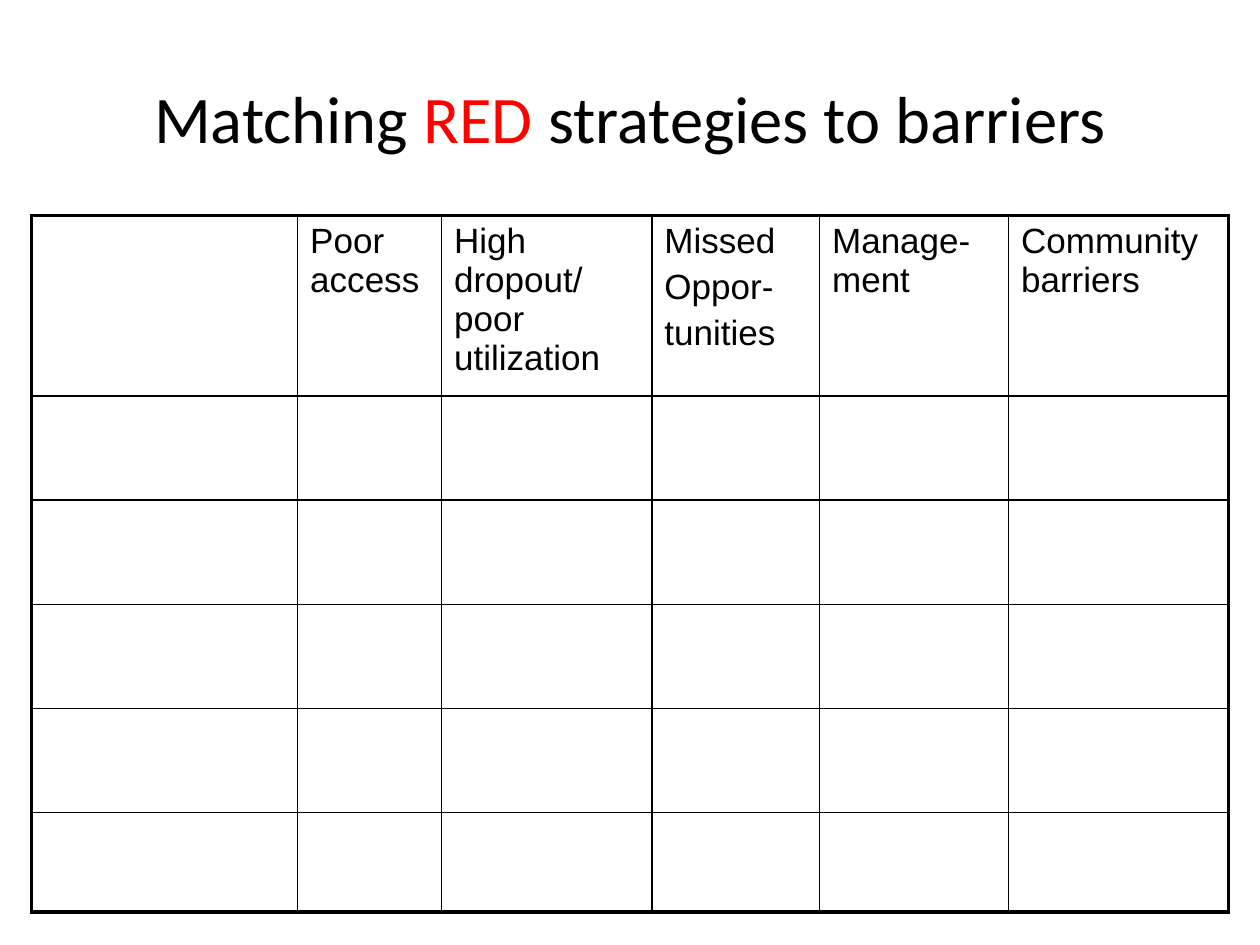
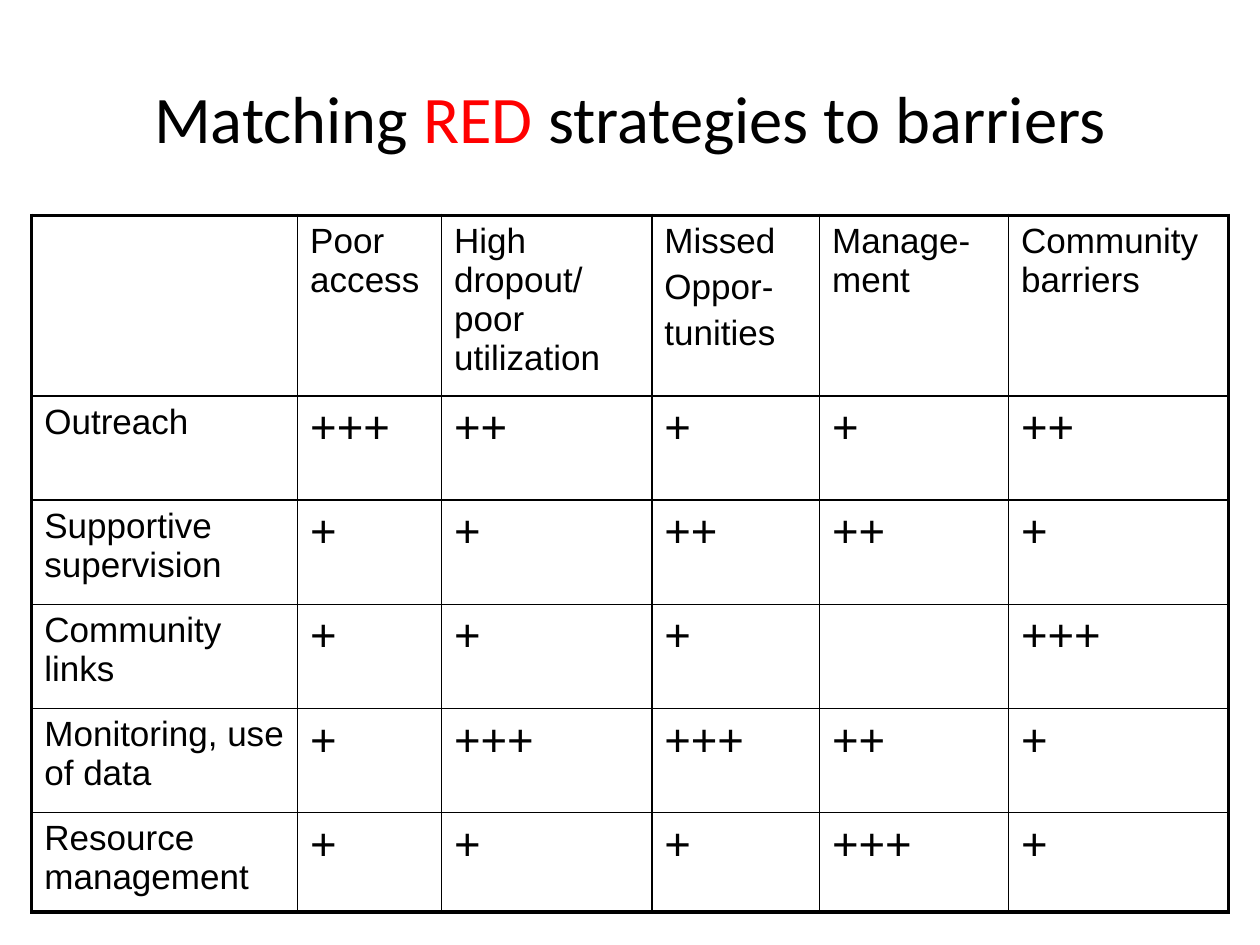
from lxml.etree import SubElement
from pptx import Presentation
from pptx.dml.color import RGBColor
from pptx.enum.text import MSO_ANCHOR, PP_ALIGN
from pptx.oxml.ns import qn
from pptx.util import Cm, Pt

BLACK, RED, WHITE = "000000", "FF0000", "FFFFFF"
THIN, THICK = 1, 2.25
TITLE = [("Matching ", BLACK), ("RED", RED), (" strategies to barriers", BLACK)]
HEADS = ["", "Poor access", "High dropout/ poor utilization",
         "Missed\nOppor-\ntunities", "Manage-ment", "Community barriers"]
SCORES = [
    ("Outreach", 3, 2, 1, 1, 2),
    ("Supportive supervision", 1, 1, 2, 2, 1),
    ("Community links", 1, 1, 1, 0, 3),
    ("Monitoring, use of data", 1, 3, 3, 2, 1),
    ("Resource management", 1, 1, 1, 3, 1),
]
BLANK = [("", 0, 0, 0, 0, 0)] * len(SCORES)
WIDTHS = [5.36, 2.9, 4.24, 3.38, 3.81, 4.44]
HEIGHTS = [3.43, 2.1, 2.1, 2.1, 2.1, 2]


def tint(code):
    return RGBColor.from_string(code)


def write(frame, text, size=20, font="Arial", align=PP_ALIGN.LEFT, gap=0.2):
    parts = text if isinstance(text, list) else [(text, BLACK)]
    para = frame.paragraphs[0]
    for words, color in parts:
        for num, line in enumerate(words.split("\n")):
            if num:
                para = frame.add_paragraph()
            para.alignment = align
            para.space_before = Pt(size * gap)
            run = para.add_run()
            run.text = line
            run.font.size, run.font.name = Pt(size), font
            run.font.color.rgb = tint(color)


def edge(cell, sides):
    props = cell._tc.get_or_add_tcPr()
    for side, width in sides.items():
        line = SubElement(props, qn(f"a:ln{side}"), w=str(Pt(width)))
        fill = SubElement(line, qn("a:solidFill"))
        SubElement(fill, qn("a:srgbClr"), val=BLACK)


def add_title(slide):
    box = slide.shapes.add_textbox(Cm(1.27), Cm(0.76), Cm(22.86), Cm(3.18))
    frame = box.text_frame
    frame.word_wrap = True
    frame.vertical_anchor = MSO_ANCHOR.MIDDLE
    write(frame, TITLE, size=38, font="Calibri", align=PP_ALIGN.CENTER, gap=0)


def add_grid(slide, scores):
    rows = [HEADS] + scores
    grid = slide.shapes.add_table(len(rows), len(HEADS), Cm(0.64), Cm(4.34),
                                  Cm(sum(WIDTHS)), Cm(sum(HEIGHTS))).table
    grid.first_row = grid.horz_banding = False
    for col, width in zip(grid.columns, WIDTHS):
        col.width = Cm(width)
    for row, height in zip(grid.rows, HEIGHTS):
        row.height = Cm(height)
    end, last = len(rows) - 1, len(HEADS) - 1
    for y, row in enumerate(rows):
        for x, value in enumerate(row):
            cell = grid.cell(y, x)
            outer = {"L": x == 0, "R": x == last, "T": y == 0, "B": y == end}
            edge(cell, {side: THICK if out else THIN
                        for side, out in outer.items()})
            cell.fill.solid()
            cell.fill.fore_color.rgb = tint(WHITE)
            mark = isinstance(value, int)
            text = "+" * value if mark else value
            if text:
                write(cell.text_frame, text, size=26 if mark else 20)


def main():
    deck = Presentation()
    deck.slide_width, deck.slide_height = Cm(25.4), Cm(19.05)
    for scores in (BLANK, SCORES):
        slide = deck.slides.add_slide(deck.slide_layouts[6])
        add_title(slide)
        add_grid(slide, scores)
    deck.save("out.pptx")


if __name__ == "__main__":
    main()
